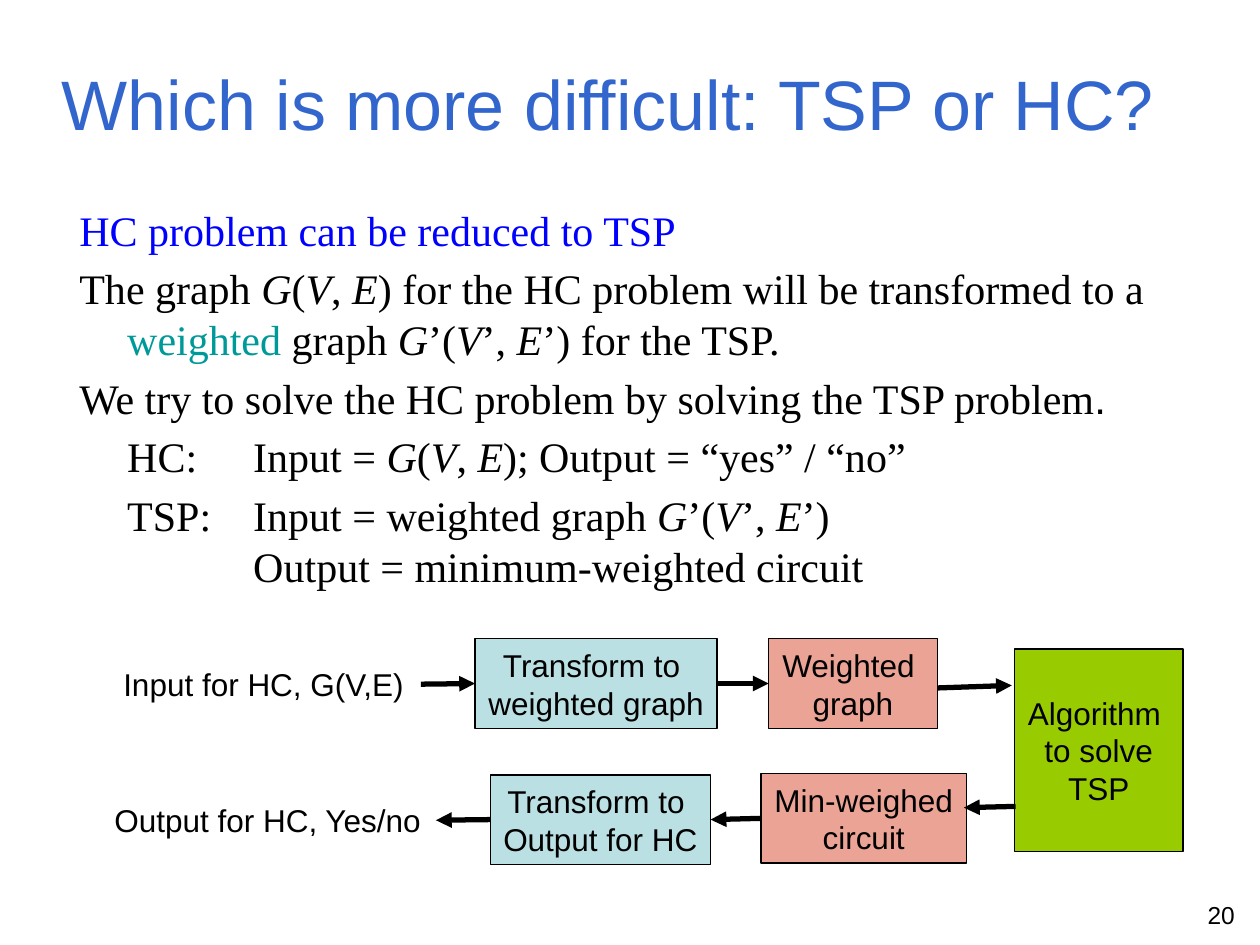
from lxml.etree import SubElement
from pptx import Presentation
from pptx.dml.color import RGBColor
from pptx.enum.shapes import MSO_CONNECTOR, MSO_SHAPE
from pptx.enum.text import MSO_ANCHOR, MSO_AUTO_SIZE, PP_ALIGN
from pptx.oxml.ns import qn
from pptx.util import Inches, Pt

BLACK = RGBColor(0x00, 0x00, 0x00)
TITLE_BLUE = RGBColor(0x33, 0x66, 0xCC)
CLAIM_BLUE = RGBColor(0x00, 0x00, 0xFF)
TEAL = RGBColor(0x00, 0x99, 0x99)
STEP_BLUE = RGBColor(0xBB, 0xE0, 0xE3)
DATA_RED = RGBColor(0xEB, 0xA3, 0x95)
SOLVER_GREEN = RGBColor(0x99, 0xCC, 0x00)

TOP, LEFT, BOTTOM, RIGHT = range(4)


class SlideBuilder:
    """Holds the slide and its style, and adds one kind of element per method."""

    sans, serif = "Arial", "Times New Roman"
    title_size, body_size, label_size, number_size = Pt(40), Pt(24), Pt(18), Pt(14)

    def __init__(self, slide):
        self.slide = slide

    def run(self, paragraph, text, size, font=sans, color=BLACK, italic=False):
        run = paragraph.add_run()
        run.text = text
        run.font.size, run.font.name = size, font
        run.font.color.rgb, run.font.italic = color, italic

    def place(self, shape, box):
        shape.left, shape.top, shape.width, shape.height = map(Inches, box)

    def title(self, text, box):
        title = self.slide.shapes.title
        self.place(title, box)
        frame = title.text_frame
        frame.auto_size = MSO_AUTO_SIZE.NONE
        frame.vertical_anchor = MSO_ANCHOR.MIDDLE
        frame.paragraphs[0].alignment = PP_ALIGN.LEFT
        self.run(frame.paragraphs[0], text, self.title_size, color=TITLE_BLUE)

    def body(self, paragraphs, box):
        body = self.slide.placeholders[1]
        self.place(body, box)
        frame = body.text_frame
        frame.auto_size = MSO_AUTO_SIZE.NONE
        for index, pieces in enumerate(paragraphs):
            paragraph = frame.paragraphs[0] if index == 0 else frame.add_paragraph()
            # Hanging indent without a bullet
            properties = paragraph._p.get_or_add_pPr()
            properties.set("marL", str(Inches(0.38)))
            properties.set("indent", str(Inches(-0.38)))
            SubElement(properties, qn("a:buNone"))
            for text, style in pieces:
                if text == "\n":
                    paragraph.add_line_break()
                    size = str(int(self.body_size.pt * 100))
                    SubElement(paragraph._p[-1], qn("a:rPr"), sz=size)
                else:
                    self.run(paragraph, text, self.body_size,
                             **{"font": self.serif, **style})

    def label(self, text, box, size=label_size, align=PP_ALIGN.LEFT):
        label = self.slide.shapes.add_textbox(*map(Inches, box))
        label.text_frame.word_wrap = False
        paragraph = label.text_frame.paragraphs[0]
        paragraph.alignment = align
        self.run(paragraph, text, size)

    def box(self, lines, box, fill):
        shape = self.slide.shapes.add_shape(MSO_SHAPE.RECTANGLE, *map(Inches, box))
        shape.shadow.inherit = False
        shape.fill.solid()
        shape.fill.fore_color.rgb = fill
        shape.line.color.rgb = BLACK
        shape.line.width = Pt(0.75)
        frame = shape.text_frame
        frame.word_wrap = False
        frame.vertical_anchor = MSO_ANCHOR.MIDDLE
        for index, line in enumerate(lines):
            paragraph = frame.paragraphs[0] if index == 0 else frame.add_paragraph()
            paragraph.alignment = PP_ALIGN.CENTER
            self.run(paragraph, line, self.label_size)
        return shape

    def arrow(self, start, end, source=None, target=None):
        arrow = self.slide.shapes.add_connector(
            MSO_CONNECTOR.STRAIGHT, *map(Inches, (*start, *end)))
        if source:
            arrow.begin_connect(*source)
        if target:
            arrow.end_connect(*target)
        arrow.line.color.rgb = BLACK
        arrow.line.width = Pt(3)
        SubElement(arrow.line._get_or_add_ln(), qn("a:tailEnd"), type="triangle")
        SubElement(arrow._element.spPr, qn("a:effectLst"))


def plain(text, **style):
    return (text, style)


def graph(prime=""):
    """Pieces of G(V, E), each letter in italics and followed by the prime."""
    return [plain("G", italic=True), plain(prime + "("),
            plain("V", italic=True), plain(prime + ", "),
            plain("E", italic=True), plain(prime + ")")]


def main():
    deck = Presentation()
    deck.slide_width, deck.slide_height = Inches(10), Inches(7.5)
    builder = SlideBuilder(deck.slides.add_slide(deck.slide_layouts[1]))

    # Title and explanation
    builder.title("Which is more difficult: TSP or HC?", (0.39, 0.19, 9.19, 1.25))
    builder.body([
        [plain("HC problem can be reduced to TSP", color=CLAIM_BLUE)],
        [plain("The graph "), *graph(),
         plain(" for the HC problem will be transformed to a "),
         plain("weighted ", color=TEAL), plain("graph "), *graph("’"),
         plain(" for the TSP.")],
        [plain("We try to solve the HC problem by solving the TSP problem"),
         plain(".", font=builder.sans)],
        [plain("\tHC: \tInput = "), *graph(), plain("; Output = “yes” / “no”")],
        [plain("\tTSP:\tInput = weighted graph "), *graph("’"), plain(" "),
         plain("\n"), plain("\t\tOutput = minimum-weighted circuit")],
    ], (0.53, 1.57, 9, 3.29))

    # Flow diagram: labels and boxes
    builder.label("Input for HC, G(V,E)", (0.88, 5.23, 2.45, 0.4))
    builder.label("Output for HC, Yes/no", (0.81, 6.31, 2.66, 0.4))
    to_graph = builder.box(["Transform to ", "weighted graph"],
                           (3.77, 5.07, 1.92, 0.71), STEP_BLUE)
    weighted = builder.box(["Weighted ", "graph"],
                           (6.1, 5.07, 1.34, 0.71), DATA_RED)
    builder.box(["Algorithm ", "to solve", "TSP"],
                (8.05, 5.15, 1.34, 1.61), SOLVER_GREEN)
    circuit = builder.box(["Min-weighed", "circuit"],
                          (6.04, 6.14, 1.63, 0.71), DATA_RED)
    to_output = builder.box(["Transform to ", "Output for HC"],
                            (3.89, 6.15, 1.75, 0.71), STEP_BLUE)

    # Flow diagram: arrows from input to solver and back to output
    builder.arrow((3.34, 5.43), (3.77, 5.43), target=(to_graph, LEFT))
    builder.arrow((5.69, 5.43), (6.1, 5.43), (to_graph, RIGHT), (weighted, LEFT))
    builder.arrow((7.44, 5.46), (8.03, 5.44))
    builder.arrow((8.06, 6.4), (7.65, 6.41))
    builder.arrow((6.04, 6.49), (5.64, 6.5), (circuit, LEFT), (to_output, RIGHT))
    builder.arrow((3.89, 6.5), (3.46, 6.51), source=(to_output, LEFT))

    # Page number
    builder.label("20", (7.57, 7.09, 2.33, 0.31), builder.number_size, PP_ALIGN.RIGHT)

    deck.save("out.pptx")


if __name__ == "__main__":
    main()
